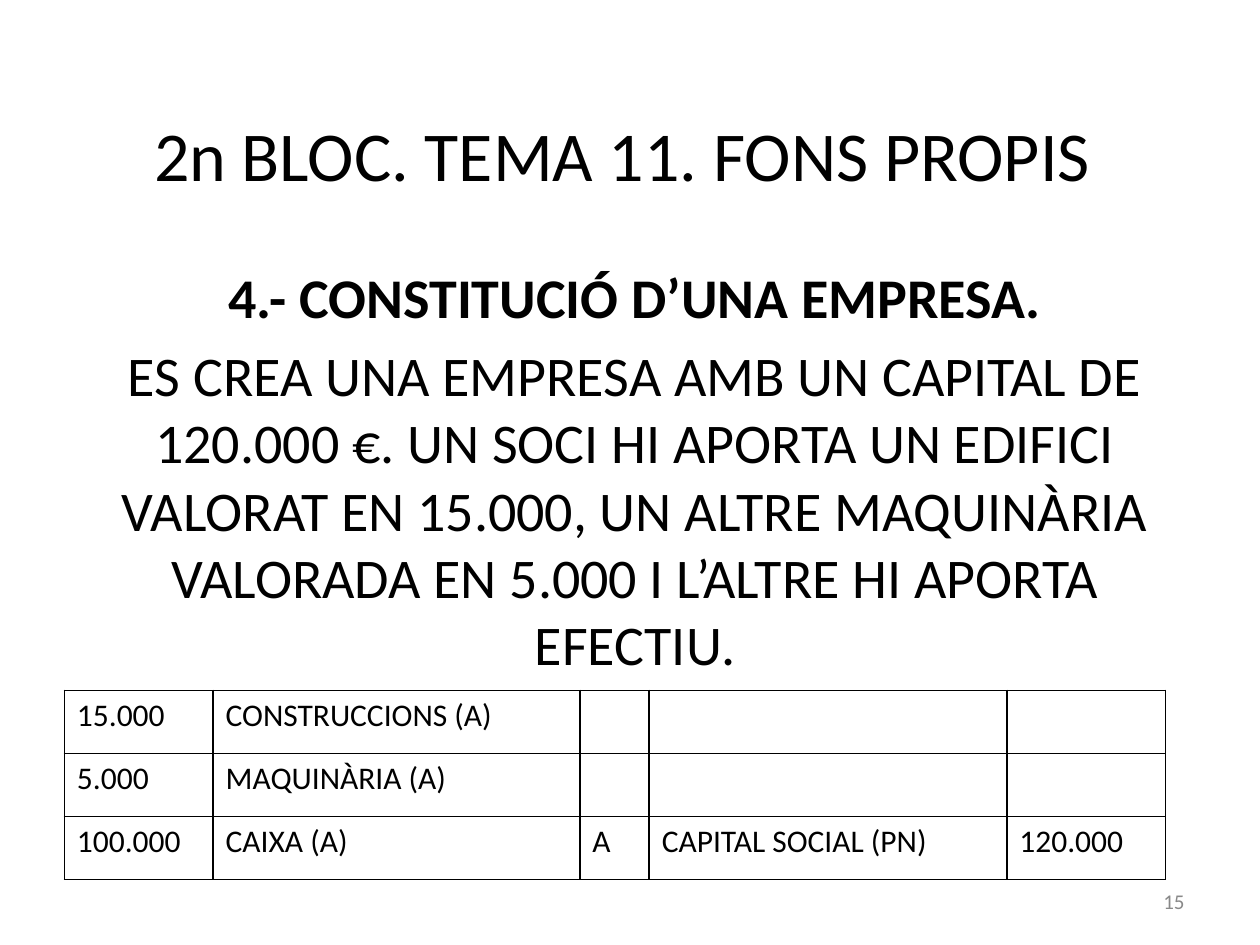
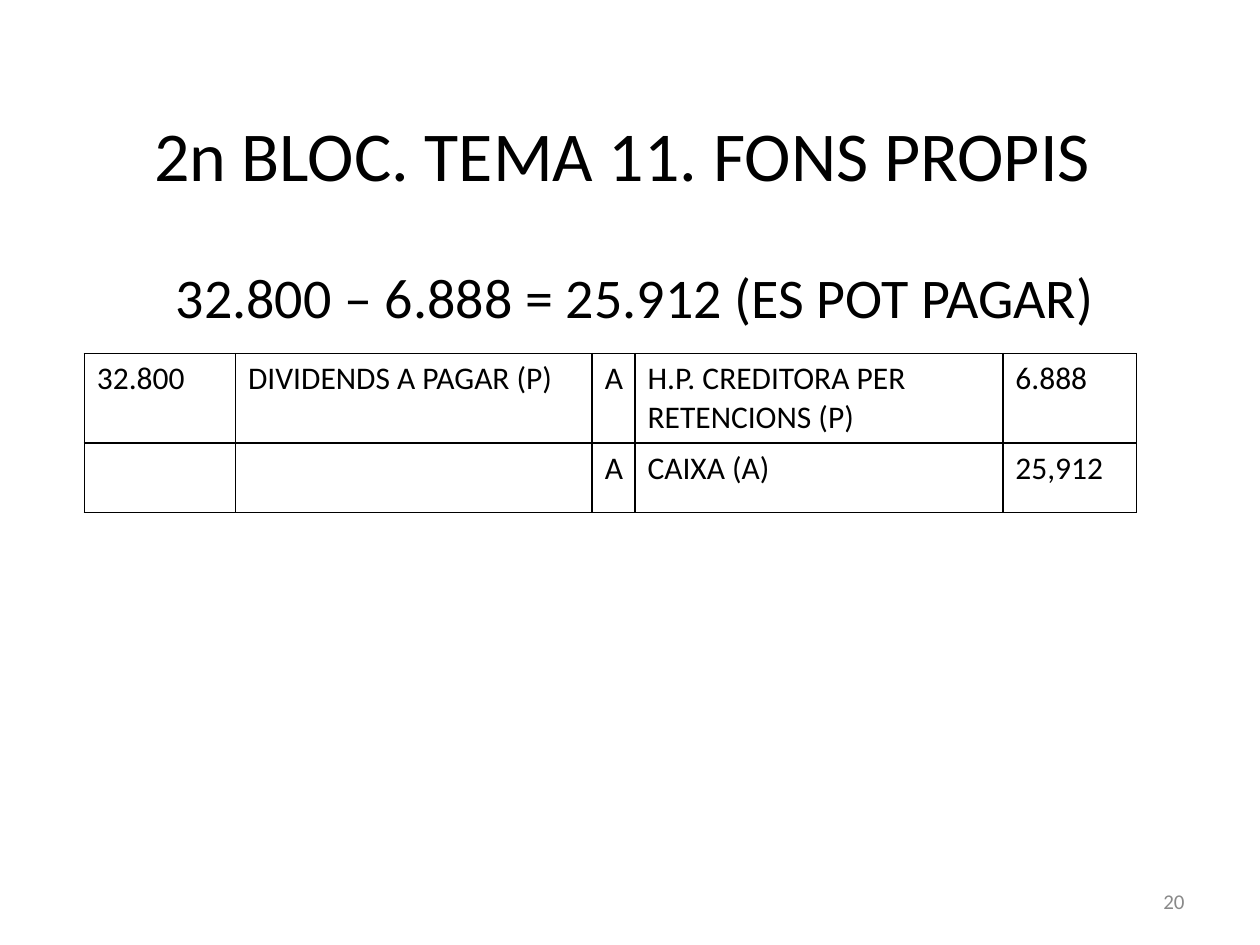
import pptx
import pptx.dml.color
import pptx.enum.text
import pptx.oxml.ns
import pptx.util
from lxml import etree

Pt = pptx.util.Pt
RGBColor = pptx.dml.color.RGBColor
Align = pptx.enum.text.PP_ALIGN
Anchor = pptx.enum.text.MSO_ANCHOR

BLACK = RGBColor(0, 0, 0)
GREY = RGBColor(0x89, 0x89, 0x89)
FONT = "Calibri"
TITLE = "2n BLOC. TEMA 11. FONS PROPIS "


def place(box, left, top, width, height):
    box.left, box.top, box.width, box.height = Pt(left), Pt(top), Pt(width), Pt(height)


def add_span(para, text, size, color=BLACK, bold=False):
    span = para.add_run()
    span.text = text
    span.font.name = FONT
    span.font.size = Pt(size)
    span.font.bold = bold
    span.font.color.rgb = color


def fill_frame(frame, lines, size, align, anchor, color=BLACK):
    """Write (text, bold) lines, one paragraph each."""
    frame.word_wrap = True
    frame.auto_size = pptx.enum.text.MSO_AUTO_SIZE.NONE
    frame.vertical_anchor = anchor
    for index, (text, bold) in enumerate(lines):
        para = frame.add_paragraph() if index else frame.paragraphs[0]
        para.alignment = align
        para.space_before = Pt(6.4 if index else 0)
        add_span(para, text, size, color, bold)


def add_page(deck, number, body_lines):
    """Add a page with the shared title, its body text and its page number."""
    page = deck.slides.add_slide(deck.slide_layouts[0])
    title, body = page.placeholders
    place(title, 54, 39.6, 612, 95.8)
    fill_frame(title.text_frame, [(TITLE, False)], 40, Align.CENTER, Anchor.MIDDLE)
    place(body, 39.6, 146.2, 646.6, 326.2)
    fill_frame(body.text_frame, body_lines, 32, Align.CENTER, Anchor.TOP)
    footer = page.shapes.add_textbox(Pt(516), Pt(500.5), Pt(168), Pt(28.8))
    fill_frame(footer.text_frame, [(number, False)], 12, Align.RIGHT, Anchor.MIDDLE, GREY)
    return page


def draw_borders(cell):
    properties = cell._tc.get_or_add_tcPr()
    for side in ("lnL", "lnR", "lnT", "lnB"):
        line = etree.SubElement(properties, pptx.oxml.ns.qn(f"a:{side}"), w=str(Pt(1)))
        fill = etree.SubElement(line, pptx.oxml.ns.qn("a:solidFill"))
        etree.SubElement(fill, pptx.oxml.ns.qn("a:srgbClr"), val=str(BLACK))


def add_journal(page, left, top, widths, heights, entries):
    """Add a bordered table of journal entries: debit, account, A, account, credit."""
    frame = page.shapes.add_table(len(heights), len(widths), Pt(left), Pt(top),
                                  Pt(sum(widths)), Pt(sum(heights)))
    table = frame.table
    table.first_row = table.horz_banding = False
    for column, width in zip(table.columns, widths):
        column.width = Pt(width)
    for row, height, entry in zip(table.rows, heights, entries):
        row.height = Pt(height)
        for cell, text in zip(row.cells, entry):
            draw_borders(cell)
            cell.fill.background()
            if text:
                add_span(cell.text_frame.paragraphs[0], text, 18)


def main():
    deck = pptx.Presentation()
    deck.slide_width, deck.slide_height = Pt(720), Pt(540)

    founding = add_page(deck, "15", [
        ("4.- CONSTITUCIÓ D’UNA EMPRESA.", True),
        ("ES CREA UNA EMPRESA AMB UN CAPITAL DE 120.000 €. UN SOCI HI APORTA "
         "UN EDIFICI VALORAT EN 15.000, UN ALTRE MAQUINÀRIA VALORADA EN 5.000 "
         "I L’ALTRE HI APORTA EFECTIU.", False),
    ])
    add_journal(founding, 36.8, 394.5, [85, 209.6, 39.6, 204.4, 90.7], [36] * 3, [
        ("15.000", "CONSTRUCCIONS (A)", "", "", ""),
        ("5.000", "MAQUINÀRIA (A)", "", "", ""),
        ("100.000", "CAIXA (A)", "A", "CAPITAL SOCIAL (PN)", "120.000"),
    ])

    dividends = add_page(deck, "20", [("32.800 – 6.888 = 25.912 (ES POT PAGAR)", False)])
    add_journal(dividends, 48.2, 202, [86.4, 203.8, 24.5, 210.2, 76.3], [50.4, 39.6], [
        ("32.800", "DIVIDENDS A PAGAR (P)", "A", "H.P. CREDITORA PER RETENCIONS (P)", "6.888"),
        ("", "", "A", "CAIXA (A)", "25,912"),
    ])

    deck.save("out.pptx")


if __name__ == "__main__":
    main()
